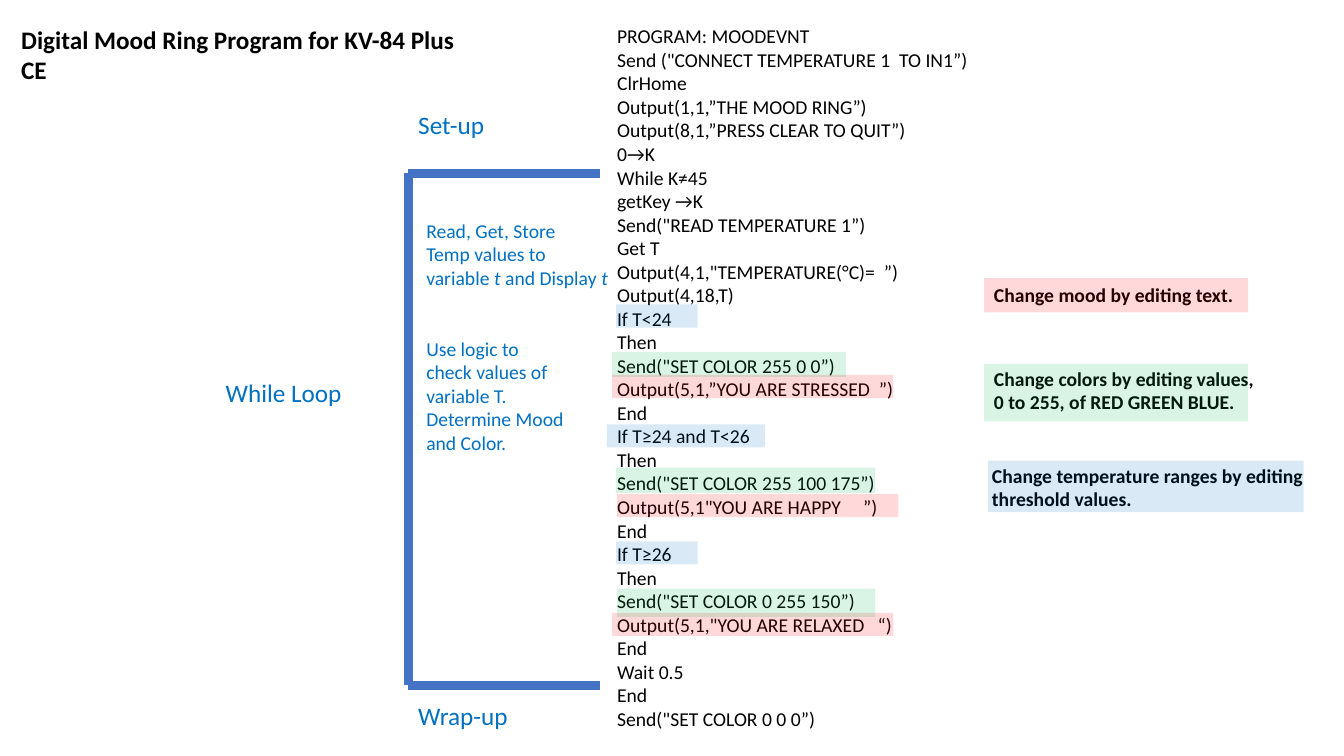
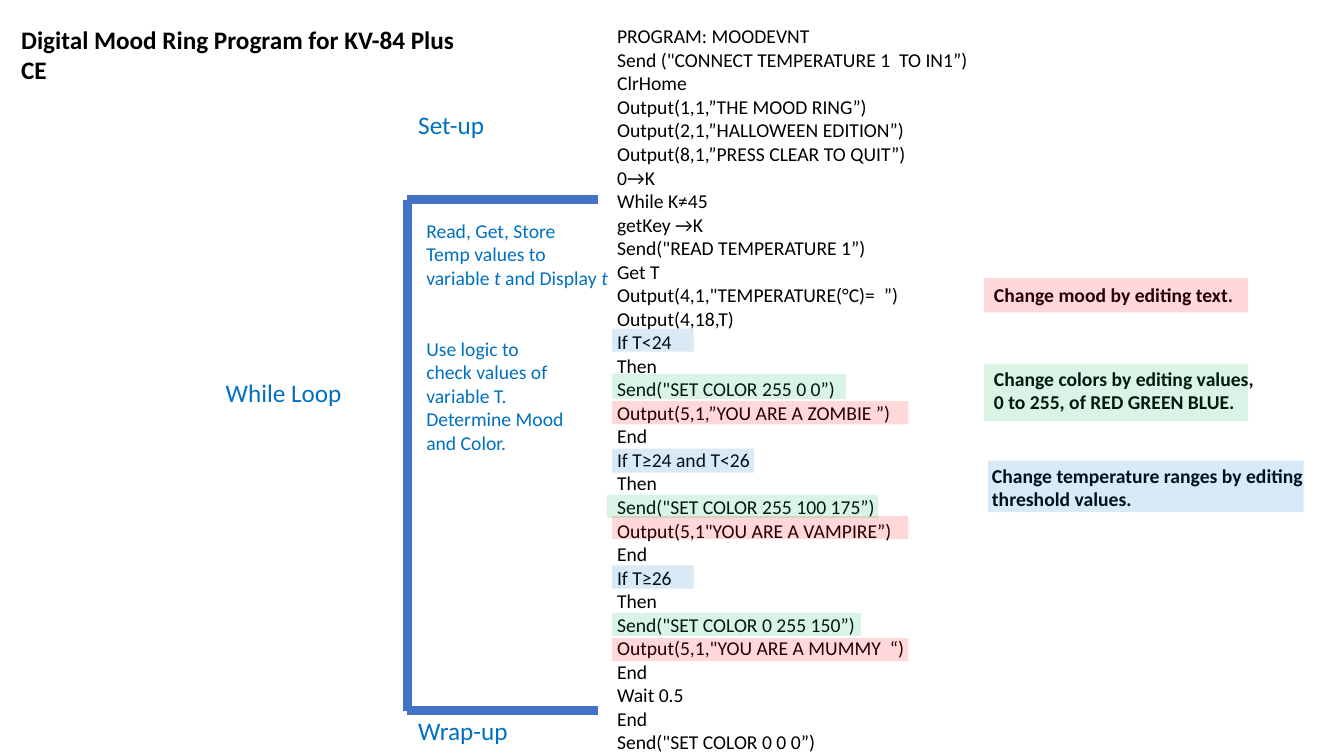
from pptx import Presentation
from pptx.dml.color import RGBColor
from pptx.enum.shapes import MSO_CONNECTOR, MSO_SHAPE
from pptx.enum.text import MSO_ANCHOR, MSO_AUTO_SIZE, PP_ALIGN
from pptx.oxml.ns import qn
from pptx.util import Inches, Pt
from lxml import etree

RECT = MSO_SHAPE.RECTANGLE
LINE = MSO_CONNECTOR.STRAIGHT
TOP = MSO_ANCHOR.TOP
LEFT = PP_ALIGN.LEFT
GROW = MSO_AUTO_SIZE.SHAPE_TO_FIT_TEXT

FONT = "Calibri"
BLACK = RGBColor(0x00, 0x00, 0x00)
BLUE = RGBColor(0x00, 0x70, 0xC0)
STEEL = RGBColor(0x44, 0x72, 0xC4)
RED = RGBColor(0xFF, 0x00, 0x00)
GREEN = RGBColor(0x00, 0xB0, 0x50)

TITLE = "Digital Mood Ring Program for KV-84 Plus CE"
START = [
    "PROGRAM: MOODEVNT",
    'Send ("CONNECT TEMPERATURE 1  TO IN1”)',
    "ClrHome",
    "Output(1,1,”THE MOOD RING”)",
]
LOOP = [
    "Output(8,1,”PRESS CLEAR TO QUIT”)",
    "0→K",
    "While K≠45",
    "getKey →K",
    'Send("READ TEMPERATURE 1”)',
    "Get T",
    'Output(4,1,"TEMPERATURE(°C)=  ”)',
    "Output(4,18,T)",
    "If T<24",
    "Then",
    'Send("SET COLOR 255 0 0”)',
    "Output(5,1,”YOU ARE {}”)",
    "End",
    "If T≥24 and T<26",
    "Then",
    'Send("SET COLOR 255 100 175”)',
    'Output(5,1"YOU ARE {}”)',
    "End",
    "If T≥26",
    "Then",
    'Send("SET COLOR 0 255 150”)',
    'Output(5,1,"YOU ARE {}“)',
    "End",
    "Wait 0.5",
    "End",
    'Send("SET COLOR 0 0 0”)',
]
LABELS = [
    (2.14, 3.69, 1.37, 0.4, 18, False, ["While Loop"]),
    (4.05, 1.04, 0.86, 0.4, 18, False, ["Set-up"]),
    (4.13, 2.12, 2.04, 0.81, 14, True,
     ["Read, Get, Store", "Temp values to variable _t _and Display _t"]),
    (4.13, 3.29, 1.57, 1.28, 14, True,
     ["Use logic to check values of variable T.", "Determine Mood and Color."]),
]
NOTES = [
    (9.76, 2.76, 2.62, 0.34, ["Change mood by editing text."],
     RED, (9.76, 2.76, 2.62, 0.34)),
    (9.76, 3.59, 2.8, 0.57,
     ["Change colors by editing values,", "0 to 255, of RED GREEN BLUE."],
     GREEN, (9.76, 3.61, 2.62, 0.57)),
    (9.74, 4.55, 3.3, 0.57,
     ["Change temperature ranges by editing", "threshold values."],
     BLUE, (9.8, 4.57, 3.13, 0.51)),
]
PAGES = [
    {
        "extra": [],
        "moods": ["STRESSED  ", "HAPPY     ", "RELAXED   "],
        "loop": (4.05, 1.72, 5.95, 6.8),
        "wrap": 6.9,
        "marks": [
            (RED, [(6.07, 3.72, 2.79, 0.23), (6.12, 4.9, 2.79, 0.23),
                   (6.07, 6.08, 2.79, 0.23)]),
            (BLUE, [(6.11, 3.02, 0.81, 0.23), (6.02, 4.21, 1.57, 0.23),
                    (6.11, 5.37, 0.81, 0.23)]),
            (GREEN, [(6.07, 3.49, 2.32, 0.25), (6.11, 4.64, 2.57, 0.25),
                     (6.12, 5.84, 2.56, 0.28)]),
        ],
    },
    {
        "extra": ["Output(2,1,”HALLOWEEN EDITION”)"],
        "moods": ["A ZOMBIE ", "A VAMPIRE", "A MUMMY  "],
        "loop": (4.04, 1.98, 5.93, 7.05),
        "wrap": 7.05,
        "marks": [
            (RED, [(6.07, 3.98, 2.94, 0.23), (6.07, 5.12, 2.94, 0.23),
                   (6.07, 6.33, 2.94, 0.23)]),
            (BLUE, [(6.07, 3.26, 0.81, 0.23), (6.07, 4.45, 1.41, 0.24),
                    (6.07, 5.61, 0.81, 0.23)]),
            (GREEN, [(6.07, 3.71, 2.32, 0.25), (6.02, 4.91, 2.69, 0.23),
                     (6.07, 6.08, 2.47, 0.23)]),
        ],
    },
]


def write(shape, box, lines, size, color, bold=False, wrap=False):
    shape.left, shape.top, shape.width, shape.height = map(Inches, box)
    frame = shape.text_frame
    frame.word_wrap = wrap
    frame.auto_size = GROW
    frame.vertical_anchor = TOP
    for i, line in enumerate(lines):
        para = frame.add_paragraph() if i else frame.paragraphs[0]
        para.alignment = LEFT
        para.space_before = Pt(0)
        font = para.font
        font.name, font.size, font.bold = FONT, Pt(size), bold
        font.color.rgb = color
        for j, part in enumerate(line.split("_")):
            if part:
                run = para.add_run()
                run.text = part
                if j % 2:
                    run.font.italic = True


def tint(slide, box, color):
    rect = slide.shapes.add_shape(RECT, *map(Inches, box))
    rect.shadow.inherit = False
    rect.line.fill.background()
    rect.fill.solid()
    rect.fill.fore_color.rgb = color
    hue = rect.fill._xPr.find(".//" + qn("a:srgbClr"))
    etree.SubElement(hue, qn("a:alpha"), val="15000")


deck = Presentation()
deck.slide_width = Inches(13.33)
deck.slide_height = Inches(7.5)

for page in PAGES:
    slide = deck.slides.add_slide(deck.slide_layouts[1])
    shapes = slide.shapes
    write(shapes.title, (0.11, 0.19, 4.76, 0.4), [TITLE], 18, BLACK, bold=True)

    moods = iter(page["moods"])
    loop = [s.format(next(moods)) if "{}" in s else s for s in LOOP]
    code = slide.placeholders[1]
    lines = START + page["extra"] + loop
    high = 7.17 if len(lines) == 30 else 7.64
    write(code, (6.02, 0.19, 6.67, high), lines, 14, BLACK, wrap=True)
    for para in code.text_frame.paragraphs:
        props = para._p.get_or_add_pPr()
        props.set("marL", "0")
        props.set("indent", "0")
        props.find(qn("a:spcBef")).addnext(etree.Element(qn("a:buNone")))

    x1, y1, x2, y2 = page["loop"]
    for ends in [(x2, y1, x1, y1), (x2, y2, x1, y2), (x1, y2, x1, y1)]:
        bar = shapes.add_connector(LINE, *map(Inches, ends))
        bar.line.color.rgb = STEEL
        bar.line.width = Pt(6)
        etree.SubElement(bar._element.spPr, qn("a:effectLst"))

    last = (4.05, page["wrap"], 1.1, 0.4, 18, False, ["Wrap-up"])
    for *box, size, wrap, text in LABELS + [last]:
        label = shapes.add_textbox(0, 0, 0, 0)
        write(label, box, text, size, BLUE, wrap=wrap)

    for *box, text, color, area in NOTES:
        note = shapes.add_textbox(0, 0, 0, 0)
        write(note, box, text, 14, BLACK, bold=True)
        tint(slide, area, color)

    for color, areas in page["marks"]:
        for area in areas:
            tint(slide, area, color)

deck.save("out.pptx")
